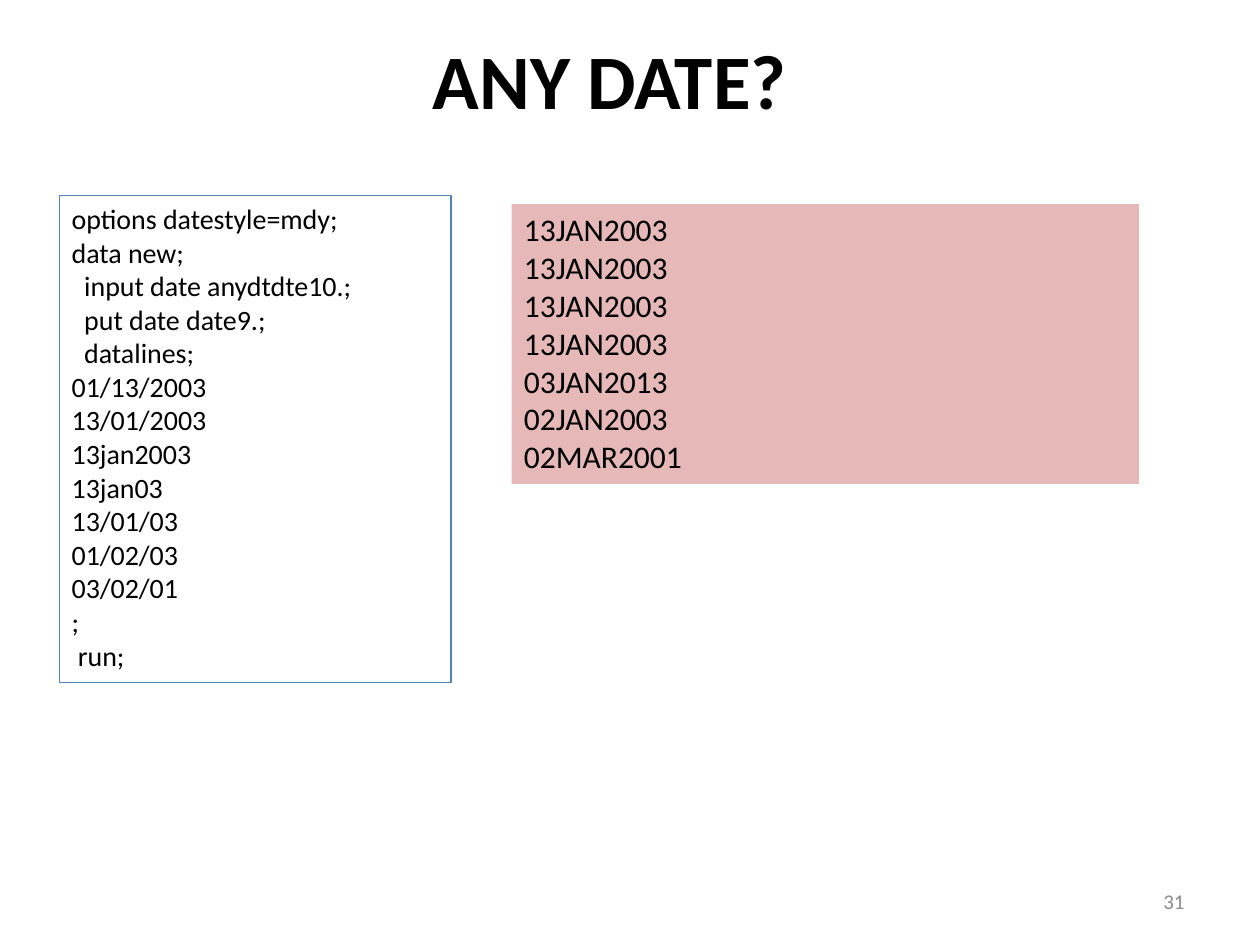
"""Builds the slide on reading dates in any style."""
from pptx import Presentation
from pptx.dml.color import RGBColor
from pptx.enum.text import MSO_ANCHOR as Anchor, MSO_AUTO_SIZE as Fit, PP_ALIGN as Align
from pptx.util import Inches, Pt

CODE = [
    "options datestyle=mdy;",
    "data new;",
    "  input date anydtdte10.;",
    "  put date date9.;",
    "  datalines;",
    "01/13/2003",
    "13/01/2003",
    "13jan2003",
    "13jan03",
    "13/01/03",
    "01/02/03",
    "03/02/01",
    ";",
    " run;",
]
DATES = ["13JAN2003"] * 4 + ["03JAN2013", "02JAN2003", "02MAR2001"]
WIDE, HIGH = 10, 7.5
HANG = 0.38


def color(code):
    return RGBColor.from_string(code)


def add_text(slide, lines, area, size, ink="000000", bold=False,
             align=Align.LEFT, anchor=Anchor.MIDDLE, hang=0):
    box = slide.shapes.add_textbox(*(Inches(part) for part in area))
    frame = box.text_frame
    frame.word_wrap = True
    frame.vertical_anchor = anchor
    for row, line in enumerate(lines):
        para = frame.paragraphs[0] if row == 0 else frame.add_paragraph()
        para.alignment = align
        if hang:
            props = para._p.get_or_add_pPr()
            props.set("marL", str(Inches(hang)))
            props.set("indent", str(-Inches(hang)))
        run = para.add_run()
        run.text = line
        font = run.font
        font.name, font.size, font.bold = "Calibri", Pt(size), bold
        font.color.rgb = color(ink)
    return box


def add_panel(slide, lines, area, size, fill=None, edge=None):
    box = add_text(slide, lines, area, size, anchor=Anchor.TOP, hang=HANG)
    box.text_frame.auto_size = Fit.SHAPE_TO_FIT_TEXT
    if fill:
        box.fill.solid()
        box.fill.fore_color.rgb = color(fill)
    if edge:
        box.line.color.rgb = color(edge)
        box.line.width = Pt(0.75)


def main():
    deck = Presentation()
    deck.slide_width, deck.slide_height = Inches(WIDE), Inches(HIGH)
    slide = deck.slides.add_slide(deck.slide_layouts[6])
    add_text(slide, ["ANY DATE?"], (0.59, 0, WIDE * 0.85, HIGH / 6), 44,
             bold=True, align=Align.CENTER)
    add_panel(slide, CODE, (0.47, 1.55, 3.11, 3.87), 16, edge="4F81BD")
    add_panel(slide, DATES, (4.06, 1.62, 4.98, 2.22), 18, fill="E6B9B8")
    add_text(slide, ["31"], (7.17, 6.95, 2.33, 0.4), 12, ink="8C8C8C",
             align=Align.RIGHT)
    deck.save("out.pptx")


if __name__ == "__main__":
    main()
